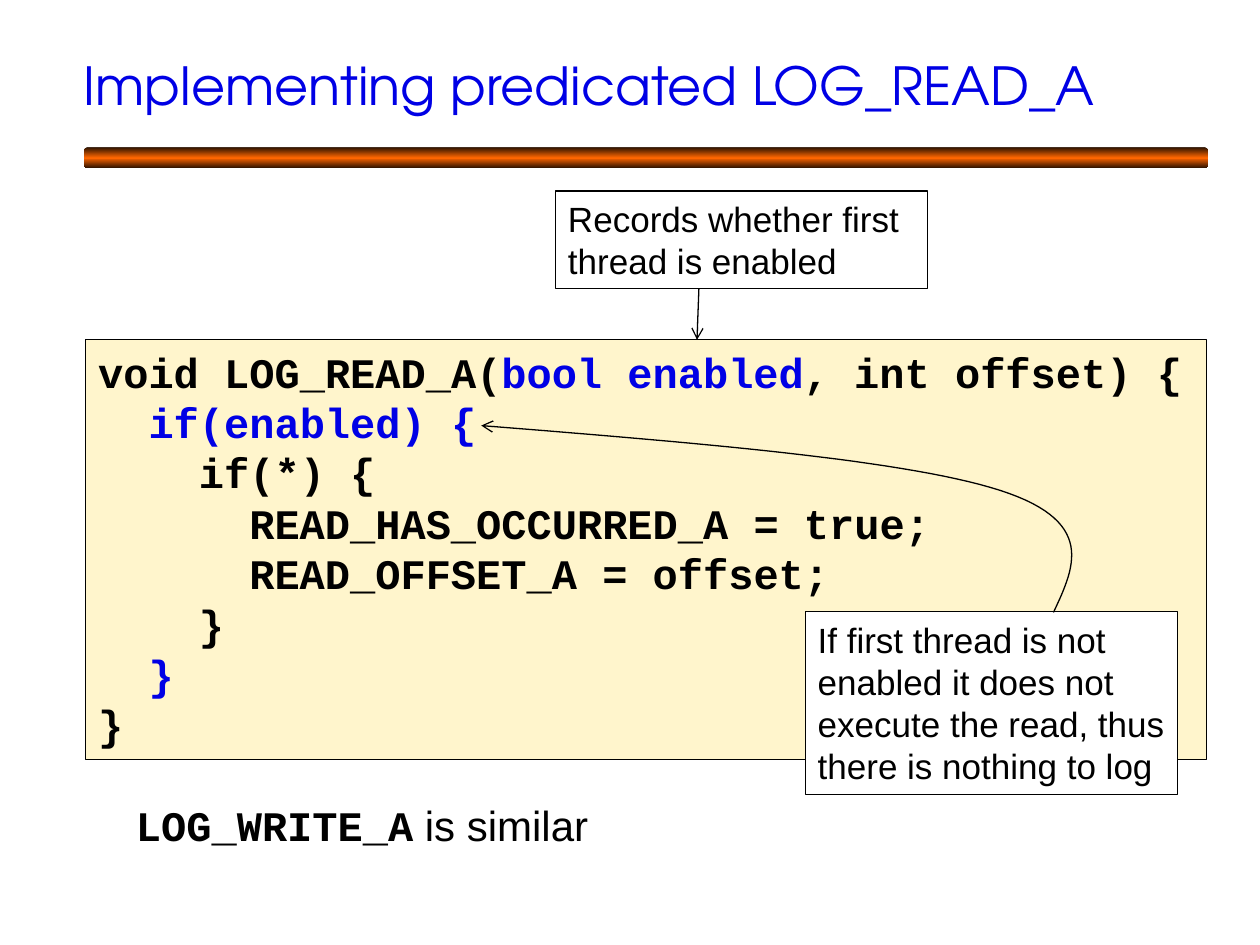
from dataclasses import dataclass

from copy import deepcopy
from lxml.etree import SubElement
from pptx import Presentation
from pptx.dml.color import RGBColor as Color
from pptx.enum.shapes import MSO_CONNECTOR as Link, MSO_SHAPE as Form
from pptx.enum.text import MSO_ANCHOR as Anchor, PP_ALIGN as Align
from pptx.oxml.ns import qn
from pptx.util import Pt


@dataclass(frozen=True)
class Theme:
    ink: Color = Color(0, 0, 0)
    blue: Color = Color(0, 0, 0xE5)
    cream: Color = Color(0xFF, 0xF5, 0xCC)
    white: Color = Color(255, 255, 255)
    rust: Color = Color(0x2A, 0x11, 0)
    flame: Color = Color(0xFF, 0x66, 0)
    head: str = "TeX Gyre Adventor"
    sans: str = "Arial"
    mono: str = "Courier New"
    title: int = 30
    code: int = 24
    note: int = 20
    line: float = 0.75
    step: float = 28.8  # two code characters


T = Theme()

# Indent level, then runs of text and colour
CODE = [
    (0, [("void LOG_READ_A(", T.ink), ("bool enabled", T.blue),
         (", int offset) {", T.ink)]),
    (1, [("if(enabled) {", T.blue)]),
    (2, [("if(*) {", T.ink)]),
    (3, [("READ_HAS_OCCURRED_A = true;", T.ink)]),
    (3, [("READ_OFFSET_A = offset;", T.ink)]),
    (2, [("}", T.ink)]),
    (1, [("}", T.blue)]),
    (0, [("}", T.ink)]),
]


def add_run(para, text, face, size, color=T.ink, bold=False):
    run = para.add_run()
    run.text = text
    font = run.font
    font.name, font.size, font.bold = face, Pt(size), bold
    font.color.rgb = color


def set_para(para, size, level=0):
    para.alignment = Align.LEFT
    para.line_spacing = Pt(size * 1.2)
    if level:
        props = para._p.get_or_add_pPr()
        props.set("marL", str(Pt(level * T.step)))
        props.set("indent", "0")


def set_frame(shape):
    frame = shape.text_frame
    frame.word_wrap = True
    frame.vertical_anchor = Anchor.TOP
    frame.margin_top = Pt(3.6)
    frame.margin_right = Pt(4)
    return frame


def add_box(slide, box, fill=None):
    shape = slide.shapes.add_shape(Form.RECTANGLE, *map(Pt, box))
    shape.shadow.inherit = False
    if fill is None:
        shape.fill.background()
    else:
        shape.fill.solid()
        shape.fill.fore_color.rgb = fill
    shape.line.color.rgb = T.ink
    shape.line.width = Pt(T.line)
    return set_frame(shape)


def add_note(slide, box, text, fill=None):
    para = add_box(slide, box, fill).paragraphs[0]
    set_para(para, T.note)
    add_run(para, text, T.sans, T.note)


def add_code(slide, box):
    frame = add_box(slide, box, T.cream)
    for row, (level, runs) in enumerate(CODE):
        para = frame.add_paragraph() if row else frame.paragraphs[0]
        set_para(para, T.code, level)
        for text, color in runs:
            add_run(para, text, T.mono, T.code, color, True)


def add_bar(slide, box):
    bar = slide.shapes.add_shape(Form.ROUNDED_RECTANGLE, *map(Pt, box))
    bar.shadow.inherit = False
    bar.line.fill.background()
    bar.fill.gradient()
    bar.fill.gradient_angle = 90
    stops = bar._element.spPr.find(".//" + qn("a:gsLst"))
    stops.append(deepcopy(stops[-1]))
    looks = [(0, T.rust), (0.5, T.flame), (1, T.rust)]
    for stop, (place, color) in zip(bar.fill.gradient_stops, looks):
        stop.position = place
        stop.color.rgb = color


def add_tip(shape):
    shape.line.color.rgb = T.ink
    shape.line.width = Pt(T.line)
    SubElement(shape.line._get_or_add_ln(), qn("a:tailEnd"), type="arrow")


def add_arrow(slide, start, end):
    link = slide.shapes.add_connector(
        Link.STRAIGHT, *map(Pt, start + end))
    add_tip(link)
    SubElement(link._element.spPr, qn("a:effectLst"))


def bend(knots, count=30):
    """Points along one cubic curve, without its first knot."""
    for n in range(1, count + 1):
        t = n / count
        parts = (1 - t) ** 3, 3 * t * (1 - t) ** 2, 3 * t * t * (1 - t), t ** 3
        yield tuple(Pt(sum(w * k[axis] for w, k in zip(parts, knots)))
                    for axis in (0, 1))


def add_curve(slide, knots):
    path = slide.shapes.build_freeform(*map(Pt, knots[0]))
    for i in range(0, len(knots) - 1, 3):
        path.add_line_segments(list(bend(knots[i:i + 4])), close=False)
    curve = path.convert_to_shape()
    curve.shadow.inherit = False
    curve.fill.background()
    add_tip(curve)


def set_title(slide, box, text):
    title = slide.shapes.title
    title.left, title.top, title.width, title.height = map(Pt, box)
    frame = title.text_frame
    frame.word_wrap = True
    frame.vertical_anchor = Anchor.MIDDLE
    para = frame.paragraphs[0]
    para.alignment = Align.LEFT
    add_run(para, text, T.head, T.title, T.blue)


def add_foot(slide, box):
    frame = set_frame(slide.shapes.add_textbox(*map(Pt, box)))
    para = frame.paragraphs[0]
    set_para(para, T.code)
    add_run(para, "LOG_WRITE_A", T.mono, T.code, bold=True)
    add_run(para, " is similar", T.sans, T.code)


def main():
    deck = Presentation()
    deck.slide_width, deck.slide_height = Pt(720), Pt(540)
    slide = deck.slides.add_slide(deck.slide_layouts[5])

    # Heading
    add_bar(slide, (48.2, 84.2, 642, 12))
    set_title(slide, (40.3, 12.2, 653.8, 72),
              "Implementing predicated LOG_READ_A")

    # Code and closing line
    add_code(slide, (49, 194.2, 640.4, 239.8))
    add_foot(slide, (70.6, 453.6, 298.8, 36))

    # Notes
    add_note(slide, (317.5, 109.1, 212.6, 55.7),
             "Records whether first thread is enabled")
    add_note(slide, (460.2, 349.6, 212.6, 104.4),
             "If first thread is not enabled it does not execute the read, "
             "thus there is nothing to log", T.white)

    # Arrows from notes to code
    add_curve(slide, [(602, 350), (614.2, 324), (626.4, 298), (571.7, 280.3),
                      (517, 262.6), (396, 252.9), (275, 243.2)])
    add_arrow(slide, (399.4, 164.8), (398.3, 194.2))

    deck.save("out.pptx")


if __name__ == "__main__":
    main()
